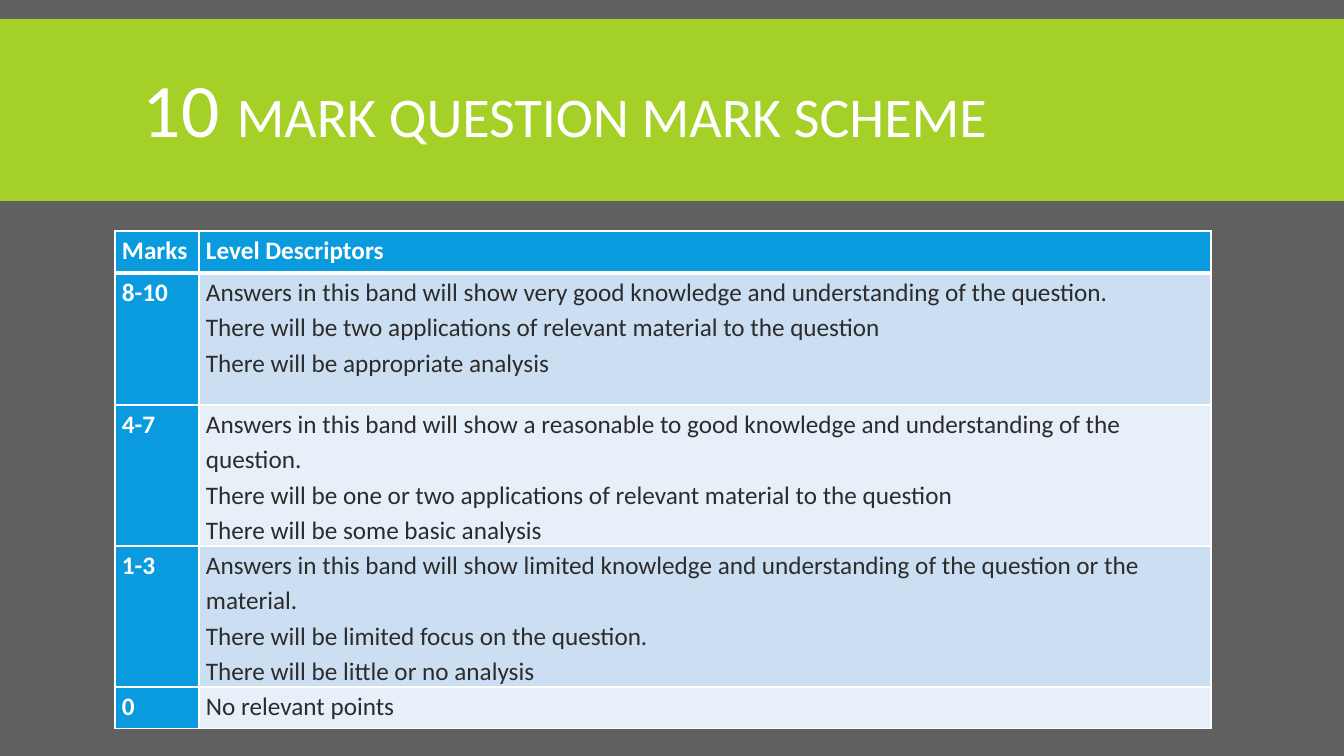
"""Build the slide that shows the mark scheme for a 10 mark question."""
import pptx
import pptx.dml.color
import pptx.enum.shapes
import pptx.enum.text
import pptx.oxml
import pptx.oxml.ns
import pptx.util

TITLE = [("10 ", 54), ("MARK QUESTION MARK SCHEME", 40)]
HEADINGS = ("Marks", ["Level Descriptors"])
BANDS = [
    ("8-10", [
        "Answers in this band will show very good knowledge and understanding of the question.",
        "There will be two applications of relevant material to the question",
        "There will be appropriate analysis",
    ]),
    ("4-7", [
        "Answers in this band will show a reasonable to good knowledge and understanding of the question.",
        "There will be one or two applications of relevant material to the question",
        "There will be some basic analysis",
    ]),
    ("1-3", [
        "Answers in this band will show limited knowledge and understanding of the question or the material.",
        "There will be limited focus on the question.",
        "There will be little or no analysis",
    ]),
    ("0", ["No relevant points"]),
]

SLIDE_SIZE = (1344, 756)
BANNER_BOX = (0, 19, 1344, 182)
TITLE_BOX = (133, 31, 1079, 166)
TABLE_CORNER = (115, 231)
COLUMN_WIDTHS = (84, 1012)
ROW_HEIGHTS = (42, 132, 141, 141, 42)
CELL_MARGINS = {"margin_left": 7, "margin_right": 7, "margin_top": 0, "margin_bottom": 0}

WHITE, GREY, GREEN, BLUE, INK = "FFFFFF", "606060", "A5D028", "099BDD", "2C2C2C"
STRIPES = ("E7EFF9", "CCDEF2")
FONT = "Calibri"
EMU_PER_PX = 914400 / 100.8


def px(length):
    """Turn pixels into EMU."""
    return pptx.util.Emu(round(length * EMU_PER_PX))


def rgb(value):
    """Turn a hex string into a colour."""
    return pptx.dml.color.RGBColor.from_string(value)


def paint(fill, value):
    """Fill with one solid colour."""
    fill.solid()
    fill.fore_color.rgb = rgb(value)


def add_run(paragraph, text, size, color, bold=False):
    """Add a formatted run to a paragraph."""
    run = paragraph.add_run()
    run.text = text
    for name, value in {"name": FONT, "size": pptx.util.Pt(size), "bold": bold}.items():
        setattr(run.font, name, value)
    run.font.color.rgb = rgb(color)


def add_borders(cell, widths):
    """Draw white cell borders with the given width in points for each side."""
    properties = cell._tc.get_or_add_tcPr()
    for side, width in widths.items():
        properties.append(pptx.oxml.parse_xml(
            f'<a:ln{side} {pptx.oxml.ns.nsdecls("a")} w="{pptx.util.Pt(width)}">'
            f'<a:solidFill><a:srgbClr val="{WHITE}"/></a:solidFill></a:ln{side}>'))


def fill_cell(cell, lines, row, column):
    """Write and format one cell of the mark scheme."""
    heading = row == 0 or column == 0
    for name, value in CELL_MARGINS.items():
        setattr(cell, name, px(value))
    add_borders(cell, {"L": 1, "R": 1, "T": 3 if row == 1 else 1, "B": 3 if row == 0 else 1})
    paint(cell.fill, BLUE if heading else STRIPES[row % 2])
    for index, line in enumerate(lines):
        paragraph = cell.text_frame.add_paragraph() if index else cell.text_frame.paragraphs[0]
        paragraph.line_spacing = 1.15
        add_run(paragraph, line, 18, WHITE if heading else INK, heading)


def add_banner(slide):
    """Add the green banner and the title on it."""
    banner = slide.shapes.add_shape(
        pptx.enum.shapes.MSO_SHAPE.RECTANGLE, *map(px, BANNER_BOX))
    banner.shadow.inherit = False
    banner.line.fill.background()
    paint(banner.fill, GREEN)

    frame = slide.shapes.add_textbox(*map(px, TITLE_BOX)).text_frame
    frame.word_wrap = True
    frame.vertical_anchor = pptx.enum.text.MSO_ANCHOR.MIDDLE
    frame.paragraphs[0].line_spacing = 0.85
    for text, size in TITLE:
        add_run(frame.paragraphs[0], text, size, WHITE)


def add_mark_scheme(slide):
    """Add the table of marks and level descriptors."""
    scheme = slide.shapes.add_table(
        len(ROW_HEIGHTS), len(COLUMN_WIDTHS),
        *map(px, TABLE_CORNER), px(sum(COLUMN_WIDTHS)), px(sum(ROW_HEIGHTS))).table
    for column, width in zip(scheme.columns, COLUMN_WIDTHS):
        column.width = px(width)
    for row, height in zip(scheme.rows, ROW_HEIGHTS):
        row.height = px(height)
    for row, (marks, descriptors) in enumerate([HEADINGS, *BANDS]):
        for column, lines in enumerate(([marks], descriptors)):
            fill_cell(scheme.cell(row, column), lines, row, column)


def main():
    """Build and save the slide."""
    deck = pptx.Presentation()
    deck.slide_width, deck.slide_height = map(px, SLIDE_SIZE)
    slide = deck.slides.add_slide(deck.slide_layouts[6])
    paint(slide.background.fill, GREY)
    add_banner(slide)
    add_mark_scheme(slide)
    deck.save("out.pptx")


if __name__ == "__main__":
    main()
